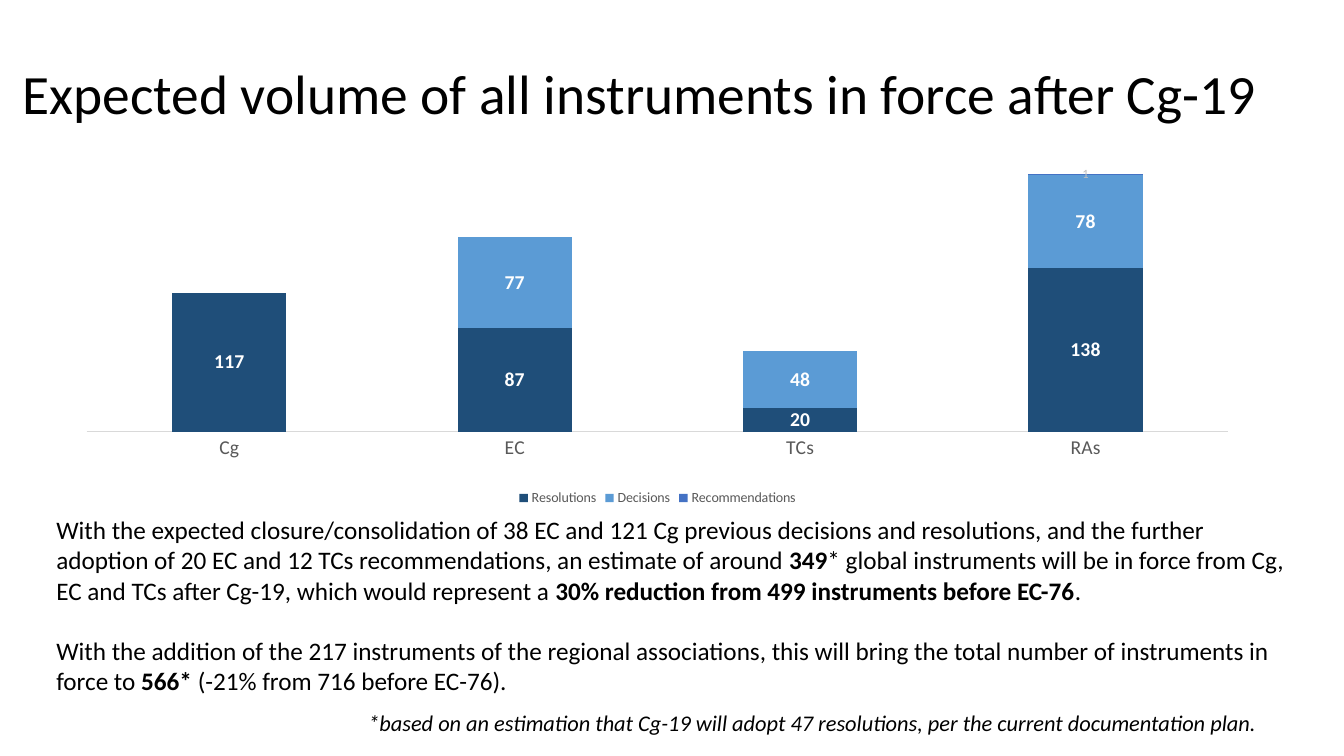
from dataclasses import dataclass

from lxml import etree
from pptx import Presentation
from pptx import util as u
from pptx.chart import data as cd
from pptx.dml import color
from pptx.enum import chart as ch, text
from pptx.oxml import ns


@dataclass(frozen=True)
class Theme:
    font: str = "Calibri"
    ink: str = "000000"
    axis_text: str = "595959"
    axis_line: str = "D9D9D9"
    title: float = 39.6
    body: float = 18
    note: float = 16
    label: float = 14
    legend: float = 10


THEME = Theme()

TITLE = "Expected volume of all instruments in force after Cg-19"
NOTE = ("*based on an estimation that Cg-19 will adopt 47 resolutions, "
        "per the current documentation plan.")
# Each paragraph is a list of (text, bold) runs.
BODY = [
    [("With the expected closure/consolidation of 38 EC and 121 Cg previous decisions and "
      "resolutions, and the further adoption of 20 EC and 12 TCs recommendations, "
      "an estimate of around ", False),
     ("349", True),
     ("* global instruments will be in force from Cg, EC and TCs after Cg-19, "
      "which would represent a", False),
     (" 30% reduction from 499 instruments before EC-76", True),
     (".", False)],
    [("With the addition of the 217 instruments of the regional associations, this will "
      "bring the total number of instruments in force to ", False),
     ("566*", True),
     (" (-21% from 716 before EC-76).", False)],
]
BODIES = ["Cg", "EC", "TCs", "RAs"]
# name, values, fill, label format
SERIES = [
    ("Resolutions", [117, 87, 20, 138], "1F4E79",
     dict(size=THEME.label, bold=True, rgb="FFFFFF")),
    ("Decisions", [0, 77, 48, 78], "5B9BD5",
     dict(size=THEME.label, bold=True, rgb="FFFFFF")),
    ("Recommendations", [0, 0, 0, 1], "4472C4",
     dict(size=9, bold=False, rgb="BFBFBF")),
]
PLOT_AREA = dict(x=0.013, y=0.008, w=0.974, h=0.785)
HIDE_ZERO = "0;;"


def set_font(font, size, rgb=THEME.ink, **flags):
    values = dict(name=THEME.font, size=u.Pt(size), **flags)
    for key, value in values.items():
        setattr(font, key, value)
    font.color.rgb = color.RGBColor.from_string(rgb)


def add_text(slide, box, paragraphs, size, anchor=text.MSO_ANCHOR.TOP, italic=False, **layout):
    """Place paragraphs of (text, bold) runs; layout holds paragraph attributes."""
    tf = slide.shapes.add_textbox(*box).text_frame
    tf.word_wrap = True
    tf.vertical_anchor = anchor
    for i, runs in enumerate(paragraphs):
        p = tf.add_paragraph() if i else tf.paragraphs[0]
        for key, value in layout.items():
            setattr(p, key, value)
        if i:
            p.space_before = u.Pt(21.5)
        for words, bold in runs:
            r = p.add_run()
            r.text = words
            set_font(r.font, size, bold=bold, italic=italic)


def set_plot_area(chart):
    area = chart._chartSpace.chart.plotArea
    for old in area.findall(ns.qn("c:layout")):
        area.remove(old)
    layout = etree.Element(ns.qn("c:layout"))
    manual = etree.SubElement(layout, ns.qn("c:manualLayout"))
    settings = dict(layoutTarget="inner", xMode="edge", yMode="edge", **PLOT_AREA)
    for tag, value in settings.items():
        etree.SubElement(manual, ns.qn(f"c:{tag}")).set("val", str(value))
    area.insert(0, layout)


def add_volume_chart(slide, box):
    data = cd.CategoryChartData()
    data.categories = BODIES
    for name, values, _, _ in SERIES:
        data.add_series(name, values)
    chart = slide.shapes.add_chart(ch.XL_CHART_TYPE.COLUMN_STACKED, *box, data).chart
    set_font(chart.font, THEME.legend)
    chart.has_title = False
    set_plot_area(chart)

    chart.has_legend = True
    chart.legend.position = ch.XL_LEGEND_POSITION.BOTTOM
    chart.legend.include_in_layout = False
    set_font(chart.legend.font, THEME.legend, THEME.axis_text)

    axis = chart.category_axis
    axis.major_tick_mark = ch.XL_TICK_MARK.NONE
    set_font(axis.tick_labels.font, THEME.label, THEME.axis_text)
    axis.format.line.width = u.Pt(0.75)
    axis.format.line.color.rgb = color.RGBColor.from_string(THEME.axis_line)
    scale = dict(visible=False, has_major_gridlines=False, minimum_scale=0, maximum_scale=250)
    for key, value in scale.items():
        setattr(chart.value_axis, key, value)

    plot = chart.plots[0]
    for key, value in dict(gap_width=150, overlap=100, vary_by_categories=False).items():
        setattr(plot, key, value)
    label_values = dict(show_value=True, position=ch.XL_LABEL_POSITION.CENTER,
                        number_format=HIDE_ZERO, number_format_is_linked=False)
    for series, (_, _, fill, label) in zip(plot.series, SERIES):
        series.format.fill.solid()
        series.format.fill.fore_color.rgb = color.RGBColor.from_string(fill)
        for key, value in label_values.items():
            setattr(series.data_labels, key, value)
        set_font(series.data_labels.font, **label)


def add_volume_slide(prs):
    slide = prs.slides.add_slide(prs.slide_layouts[6])

    def area(*lengths):
        return [u.Cm(v) for v in lengths]

    add_text(slide, area(0.32, 0.84, 33.25, 3.18), [[(TITLE, False)]], THEME.title,
             anchor=text.MSO_ANCHOR.MIDDLE, line_spacing=0.9)
    add_volume_chart(slide, area(1.8, 3.32, 29.54, 9.53))
    add_text(slide, area(1.17, 12.84, 31.52, 4.88), BODY, THEME.body)
    add_text(slide, area(2.54, 17.75, 29.37, 0.94), [[(NOTE, False)]], THEME.note,
             italic=True, alignment=text.PP_ALIGN.RIGHT)


def main():
    prs = Presentation()
    prs.slide_width, prs.slide_height = u.Cm(33.87), u.Cm(19.05)
    add_volume_slide(prs)
    prs.save("out.pptx")


if __name__ == "__main__":
    main()
